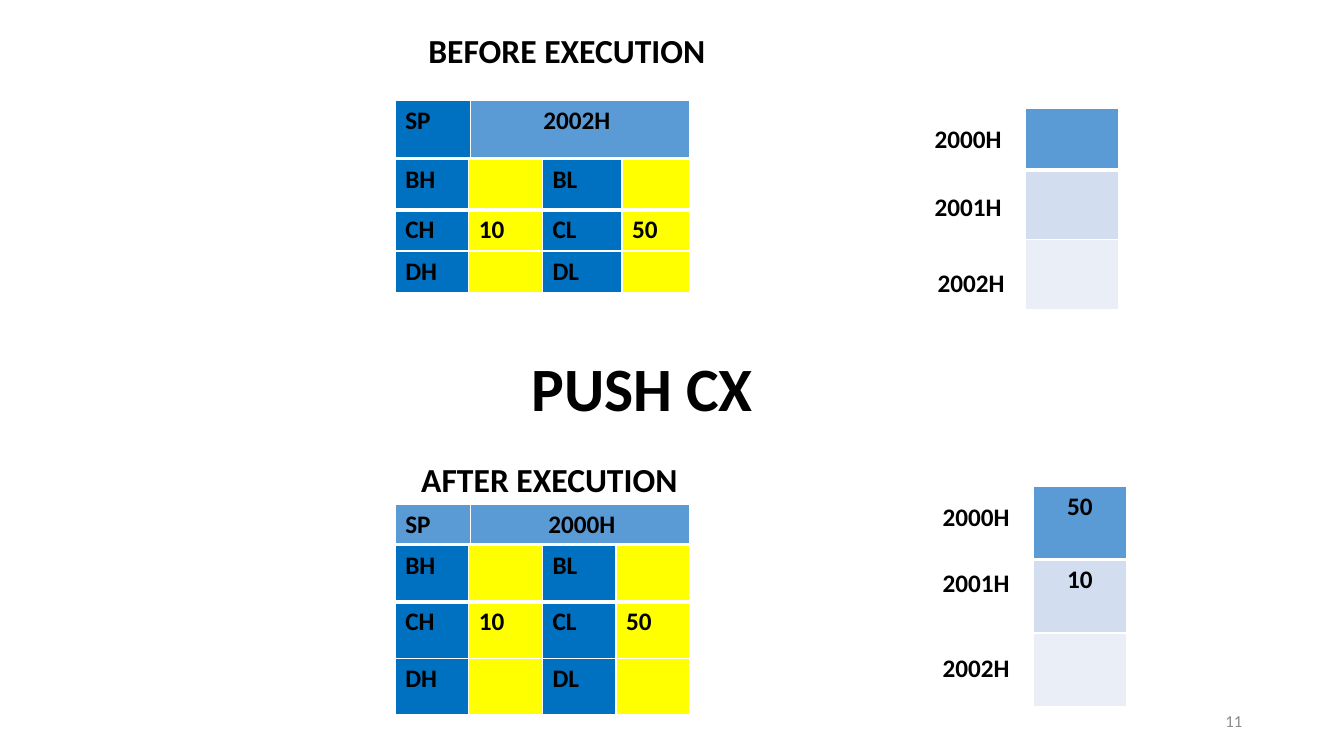
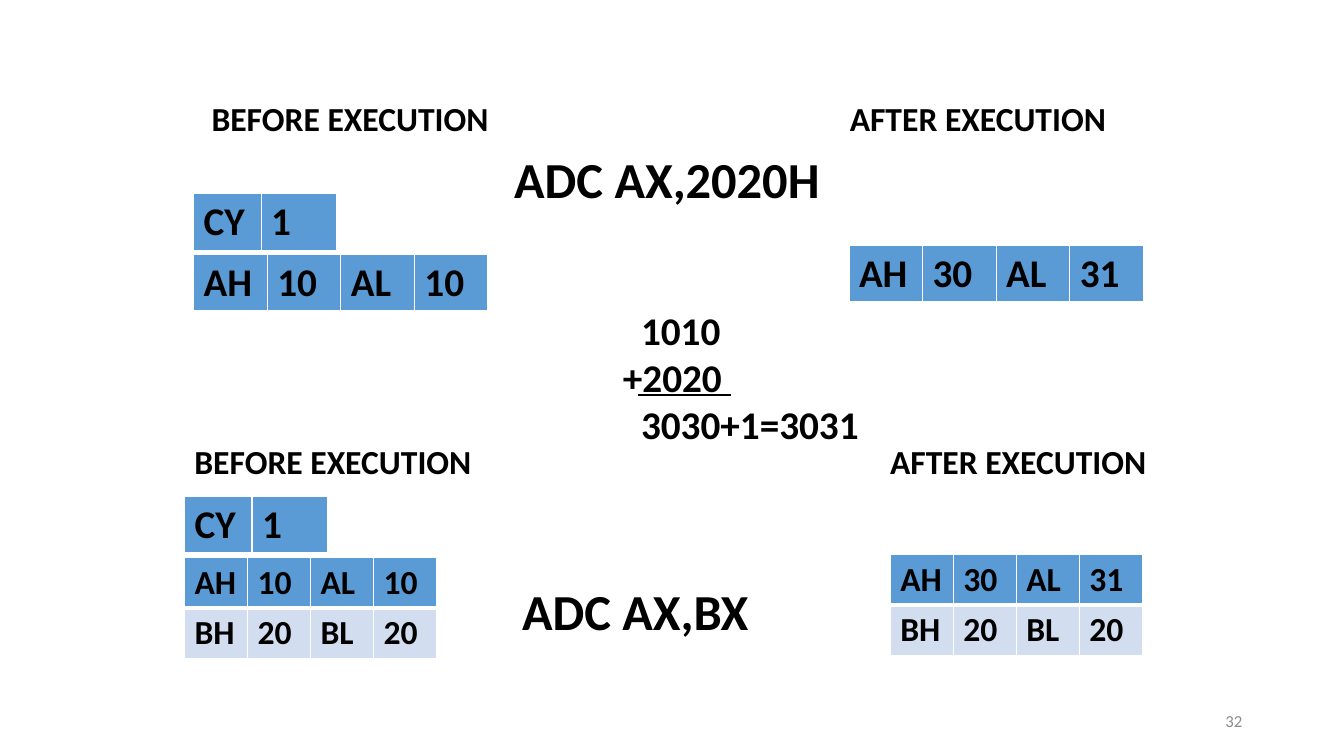
from lxml import etree
from pptx import Presentation
from pptx.dml.color import RGBColor
from pptx.enum.shapes import MSO_CONNECTOR
from pptx.enum.text import MSO_ANCHOR, MSO_AUTO_SIZE, PP_ALIGN
from pptx.oxml.ns import qn
from pptx.util import Inches, Pt

LEFT, CENTER, RIGHT = PP_ALIGN.LEFT, PP_ALIGN.CENTER, PP_ALIGN.RIGHT
TOP, MIDDLE = MSO_ANCHOR.TOP, MSO_ANCHOR.MIDDLE
NO_FIT = MSO_AUTO_SIZE.NONE
STRAIGHT = MSO_CONNECTOR.STRAIGHT
FONT = "Calibri"
COLORS = {
    "text": "000000",
    "number": "8C8C8C",
    "border": "FFFFFF",
    "name": "0070C0",
    "value": "FFFF00",
    "head": "5B9BD5",
    "band": "D2DEEF",
    "light": "EAEFF7",
}


def rgb(name):
    return RGBColor.from_string(COLORS[name])


def add_run(p, text, size, color="text", bold=True):
    r = p.add_run()
    r.text = text
    r.font.name = FONT
    r.font.size = Pt(size)
    r.font.bold = bold
    r.font.color.rgb = rgb(color)


def write(tf, text, size, color="text", bold=True, align=LEFT, anchor=TOP):
    tf.word_wrap = True
    tf.auto_size = NO_FIT
    tf.vertical_anchor = anchor
    p = tf.paragraphs[0]
    p.alignment = align
    add_run(p, text, size, color, bold)


def add_text(s, box, text, size, **style):
    sp = s.shapes.add_textbox(*map(Inches, box))
    write(sp.text_frame, text, size, **style)


def add_heading(s, x, y, text):
    add_text(s, (x, y, 3.2, 0.5), text, 24)


def add_title(s, box, text, size):
    sp = s.shapes.title
    sp.left, sp.top, sp.width, sp.height = map(Inches, box)
    write(sp.text_frame, text, size)


def add_number(s, number):
    add_text(s, (9.42, 6.95, 3, 0.4), number, 12, color="number",
             bold=False, align=RIGHT, anchor=MIDDLE)


def set_borders(cell, bottom):
    tcPr = cell._tc.get_or_add_tcPr()
    for side, width in (("L", 1), ("R", 1), ("T", 1), ("B", bottom)):
        ln = etree.SubElement(tcPr, qn(f"a:ln{side}"), w=str(Pt(width)))
        fill = etree.SubElement(ln, qn("a:solidFill"))
        etree.SubElement(fill, qn("a:srgbClr"), val=COLORS["border"])


def add_grid(s, x, y, cols, rows, texts, fills, size=18, align=LEFT):
    box = map(Inches, (x, y, sum(cols), sum(rows)))
    table = s.shapes.add_table(len(rows), len(cols), *box).table
    table.first_row = table.horz_banding = False
    for col, width in zip(table.columns, cols):
        col.width = Inches(width)
    for i, height in enumerate(rows):
        table.rows[i].height = Inches(height)
        for j, text in enumerate(texts[i]):
            cell = table.cell(i, j)
            set_borders(cell, 1 if i else 3)
            cell.fill.solid()
            cell.fill.fore_color.rgb = rgb(fills[i][j])
            if text:
                p = cell.text_frame.paragraphs[0]
                p.alignment = align
                add_run(p, text, size)
    return table


def add_registers(s, x, y, pointer, pointer_fill, inset, sp_height, cols, rows):
    table = add_grid(s, x, y, (0.75, 2.17), [sp_height], [("SP", pointer)],
                     [(pointer_fill, "head")])
    table.cell(0, 1).margin_left = Inches(inset)
    texts = [("BH", "", "BL", ""), ("CH", "10", "CL", "50"), ("DH", "", "DL", "")]
    add_grid(s, x, y + sp_height, cols, rows, texts, [("name", "value") * 2] * 3)


def add_memory(s, x, y, rows, values, offsets):
    add_grid(s, x, y, [0.92], rows, [[v] for v in values],
             [["head"], ["band"], ["light"]], align=CENTER)
    for address, (dx, dy) in zip(("2000H", "2001H", "2002H"), offsets):
        add_text(s, (x + dx, y + dy, 0.95, 0.4), address, 18)


def add_flag(s, x, y):
    add_grid(s, x, y, (0.67, 0.75), [0.57], [("CY", "1")], [("head",) * 2], 28)


def add_pairs(s, x, y, width, height, size, rows):
    fills = [("head",) * 4, ("band",) * 4]
    add_grid(s, x, y, [width / 4] * 4, [height] * len(rows), rows, fills, size)


def add_sum(s, x, y):
    sp = s.shapes.add_textbox(*map(Inches, (x, y, 2.75, 1.51)))
    tf = sp.text_frame
    tf.word_wrap = True
    lines = (("1010", 0.18), ("+2020", 0), ("3030+1=3031", 0.18))
    for i, (text, indent) in enumerate(lines):
        p = tf.add_paragraph() if i else tf.paragraphs[0]
        p._p.get_or_add_pPr().set("marL", str(Inches(indent)))
        add_run(p, text, 28)
    line = s.shapes.add_connector(
        STRAIGHT, *map(Inches, (x + 0.25, y + 0.93, x + 1.17, y + 0.93)))
    line.line.color.rgb = rgb("text")
    line.line.width = Pt(1.5)
    etree.SubElement(line._element.spPr, qn("a:effectLst"))


def build_push(prs):
    s = prs.slides.add_slide(prs.slide_layouts[5])
    add_title(s, (5.17, 3.42, 3.25, 0.84), "PUSH CX", 44)
    add_heading(s, 4.15, 0.25, "BEFORE EXECUTION")
    add_registers(s, 3.92, 1, "2002H", "name", 0.72, 0.58,
                  (0.73, 0.73, 0.79, 0.67), (0.5, 0.41, 0.41))
    add_memory(s, 10.17, 1.08, (0.61, 0.69, 0.69), ("", "", ""),
               ((-1, 0.09), (-1, 0.77), (-0.97, 1.52)))
    add_heading(s, 4.08, 4.5, "AFTER EXECUTION")
    add_registers(s, 3.92, 5, "2000H", "head", 0.77, 0.41,
                  [0.73] * 4, [0.56] * 3)
    add_memory(s, 10.25, 4.83, (0.72, 0.73, 0.73), ("50", "10", ""),
               ((-1, 0.09), (-1, 0.75), (-1, 1.59)))
    add_number(s, "11")


def build_adc(prs):
    s = prs.slides.add_slide(prs.slide_layouts[5])
    before, after = ("AH", "10", "AL", "10"), ("AH", "30", "AL", "31")
    operand = ("BH", "20", "BL", "20")
    add_title(s, (5, 1.42, 3.33, 0.71), "ADC AX,2020H", 36)
    add_heading(s, 2, 0.92, "BEFORE EXECUTION")
    add_flag(s, 1.92, 1.92)
    add_pairs(s, 1.92, 2.52, 2.92, 0.57, 28, [before])
    add_heading(s, 8.33, 0.92, "AFTER EXECUTION")
    add_pairs(s, 8.42, 2.43, 2.92, 0.57, 28, [after])
    add_sum(s, 6.08, 2.99)
    add_heading(s, 1.83, 4.33, "BEFORE EXECUTION")
    add_flag(s, 1.83, 4.92)
    add_pairs(s, 1.83, 5.53, 2.5, 0.5, 24, [before, operand])
    add_text(s, (5.08, 5.71, 2.92, 0.71), "ADC AX,BX", 36)
    add_heading(s, 8.73, 4.33, "AFTER EXECUTION")
    add_pairs(s, 8.83, 5.5, 2.5, 0.5, 24, [after, operand])
    add_number(s, "32")


def main():
    prs = Presentation()
    prs.slide_width, prs.slide_height = Inches(13.33), Inches(7.5)
    build_push(prs)
    build_adc(prs)
    prs.save("out.pptx")


if __name__ == "__main__":
    main()
